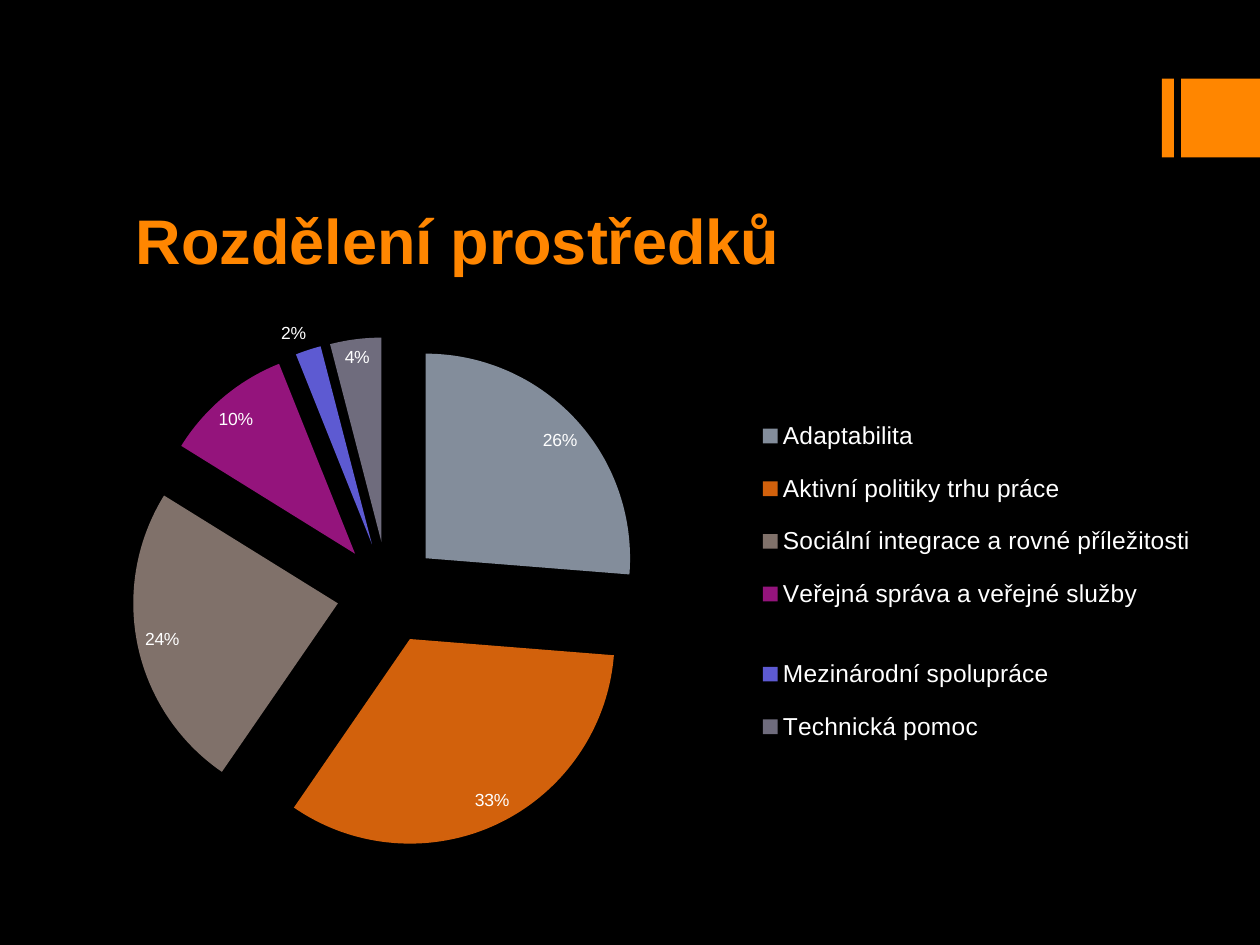
from lxml import etree
from pptx import Presentation
from pptx.chart.data import CategoryChartData
from pptx.dml.color import RGBColor
from pptx.enum.chart import XL_CHART_TYPE, XL_LABEL_POSITION, XL_LEGEND_POSITION
from pptx.enum.shapes import MSO_SHAPE
from pptx.enum.text import MSO_ANCHOR
from pptx.oxml.ns import qn
from pptx.util import Pt

PIE = XL_CHART_TYPE.PIE_EXPLODED
BEST_FIT = XL_LABEL_POSITION.BEST_FIT
RIGHT = XL_LEGEND_POSITION.RIGHT
RECTANGLE = MSO_SHAPE.RECTANGLE
BOTTOM = MSO_ANCHOR.BOTTOM

BLACK = RGBColor(0x00, 0x00, 0x00)
WHITE = RGBColor(0xFF, 0xFF, 0xFF)
ORANGE = RGBColor(0xFF, 0x86, 0x00)
FONT = "Arial"

SHARES = [
    ("Adaptabilita", 26, RGBColor(0x83, 0x8D, 0x9B)),
    ("Aktivní politiky trhu práce", 33, RGBColor(0xD2, 0x61, 0x0C)),
    ("Sociální integrace a rovné příležitosti", 24, RGBColor(0x80, 0x71, 0x6A)),
    ("Veřejná správa a veřejné služby\n", 10, RGBColor(0x94, 0x14, 0x7C)),
    ("Mezinárodní spolupráce", 2, RGBColor(0x5D, 0x5A, 0xD2)),
    ("Technická pomoc", 4, RGBColor(0x6F, 0x6C, 0x7D)),
]


def set_font(font, size, color, bold=False):
    font.name = FONT
    font.size = Pt(size)
    font.bold = bold
    font.color.rgb = color


def set_layout(parent, index, settings):
    for old in parent.findall(qn("c:layout")):
        parent.remove(old)
    layout = etree.Element(qn("c:layout"))
    manual = etree.SubElement(layout, qn("c:manualLayout"))
    for tag, value in settings:
        etree.SubElement(manual, qn(f"c:{tag}")).set("val", str(value))
    parent.insert(index, layout)


def add_accent(slide, left, top, width, height):
    bar_width = 6.8
    for x, w in ((left, bar_width), (left + width - height, height)):
        sp = slide.shapes.add_shape(RECTANGLE, Pt(x), Pt(top), Pt(w), Pt(height))
        sp.shadow.inherit = False
        sp.fill.solid()
        sp.fill.fore_color.rgb = ORANGE
        sp.line.fill.background()


def add_title(slide, left, top, width, height):
    sp = slide.shapes.add_textbox(Pt(left), Pt(top), Pt(width), Pt(height))
    tf = sp.text_frame
    tf.word_wrap = True
    tf.vertical_anchor = BOTTOM
    p = tf.paragraphs[0]
    p.text = "Rozdělení prostředků"
    set_font(p.font, 36, ORANGE, bold=True)


def add_share_chart(slide, left, top, width, height):
    data = CategoryChartData(number_format="#,##0")
    data.categories = [name for name, _, _ in SHARES]
    data.add_series("Series 1", [value for _, value, _ in SHARES])
    chart = slide.shapes.add_chart(
        PIE, Pt(left), Pt(top), Pt(width), Pt(height), data
    ).chart
    chart.has_title = False
    set_font(chart.font, 10, WHITE)

    plot = chart.plots[0]
    plot.vary_by_categories = True
    plot.has_data_labels = True
    labels = plot.data_labels
    labels.show_percentage = True
    labels.show_value = False
    labels.number_format = "0%"
    labels.number_format_is_linked = False
    labels.position = BEST_FIT
    set_font(labels.font, 10, WHITE)

    series = plot.series[0]
    for i, (_, _, color) in enumerate(SHARES):
        fill = series.points[i].format.fill
        fill.solid()
        fill.fore_color.rgb = color
    for explosion in series._element.iter(qn("c:explosion")):
        explosion.set("val", "25")

    chart.has_legend = True
    legend = chart.legend
    legend.position = RIGHT
    legend.include_in_layout = False
    set_font(legend.font, 14, WHITE)

    edges = [("xMode", "edge"), ("yMode", "edge")]
    plot_area = chart._chartSpace.chart.plotArea
    plot_box = [("x", 0.09), ("y", 0.07), ("w", 0.43), ("h", 0.9)]
    set_layout(plot_area, 0, [("layoutTarget", "inner")] + edges + plot_box)
    legend_box = [("x", 0.61), ("y", 0.18), ("w", 0.38), ("h", 0.64)]
    set_layout(legend._element, 1, edges + legend_box)


def main():
    prs = Presentation()
    prs.slide_width, prs.slide_height = Pt(720), Pt(540)
    slide = prs.slides.add_slide(prs.slide_layouts[6])
    slide.background.fill.solid()
    slide.background.fill.fore_color.rgb = BLACK
    add_accent(slide, 664, 45, 56, 45)
    add_title(slide, 70.6, 71.3, 576, 90.7)
    add_share_chart(slide, 14.4, 167.8, 679.7, 329)
    prs.save("out.pptx")


if __name__ == "__main__":
    main()
